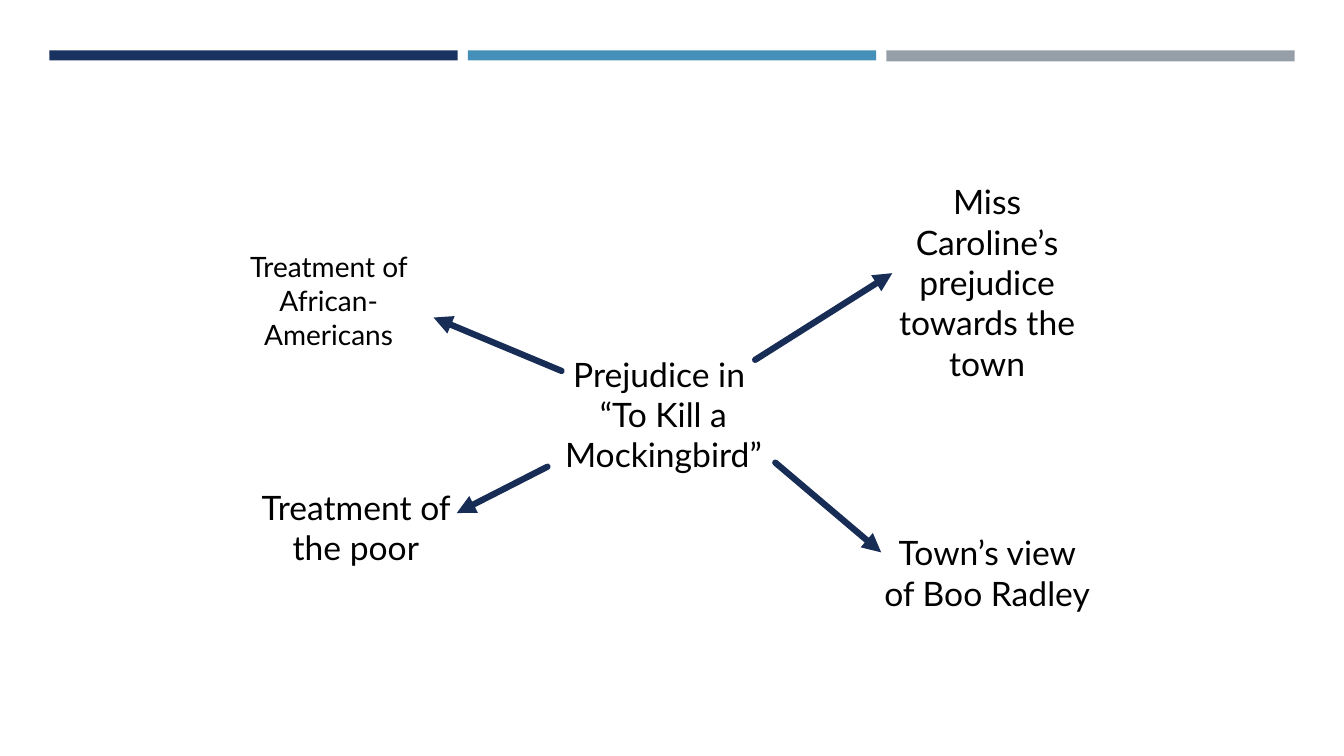
import pptx
import pptx.dml.color
import pptx.enum.shapes
import pptx.enum.text
import pptx.oxml.ns
import pptx.util
from lxml import etree
from pptx.dml.color import RGBColor
from pptx.util import Inches

NAVY = RGBColor(0x1A, 0x32, 0x60)
BLUE = RGBColor(0x45, 0x90, 0xB8)
GRAY = RGBColor(0x96, 0x9F, 0xA7)
ARROW = RGBColor(0x17, 0x2D, 0x56)
BLACK = RGBColor(0, 0, 0)

BAR_LEFT, BAR_STEP, BAR_WIDTH = 0.49, 4.15, 4.05
LABEL_WIDTH = 2.3

deck = pptx.Presentation()
deck.slide_width = Inches(13.33)
deck.slide_height = Inches(7.5)
page = deck.slides.add_slide(deck.slide_layouts[6])

for index, (color, height) in enumerate([(NAVY, 0.1), (BLUE, 0.1), (GRAY, 0.11)]):
    bar = page.shapes.add_shape(
        pptx.enum.shapes.MSO_SHAPE.RECTANGLE,
        Inches(BAR_LEFT + index * BAR_STEP), Inches(0.5),
        Inches(BAR_WIDTH), Inches(height))
    bar.shadow.inherit = False
    bar.fill.solid()
    bar.fill.fore_color.rgb = color
    bar.line.fill.background()

# left, top, height, font size, paragraphs
labels = [
    (5.43, 3.46, 1.31, 24, ["Prejudice in ", "“To Kill a Mockingbird”"]),
    (8.64, 1.75, 2.12, 24, ["Miss Caroline’s prejudice towards the town"]),
    (2.11, 2.43, 1.11, 20, ["Treatment of African-Americans"]),
    (2.38, 4.78, 0.91, 24, ["Treatment of the poor"]),
    (8.64, 5.23, 0.91, 24, ["Town’s view of Boo Radley"]),
]
for left, top, height, size, lines in labels:
    box = page.shapes.add_textbox(
        Inches(left), Inches(top), Inches(LABEL_WIDTH), Inches(height))
    frame = box.text_frame
    frame.word_wrap = True
    frame.auto_size = pptx.enum.text.MSO_AUTO_SIZE.SHAPE_TO_FIT_TEXT
    frame.text = "\n".join(lines)
    for para in frame.paragraphs:
        para.alignment = pptx.enum.text.PP_ALIGN.CENTER
        para.font.name = "Lato"
        para.font.size = pptx.util.Pt(size)
        para.font.color.rgb = BLACK

# start x, start y, end x, end y
arrows = [
    (5.57, 3.68, 4.3, 3.15),
    (5.43, 4.63, 4.53, 5.09),
    (7.49, 3.57, 8.85, 2.71),
    (7.69, 4.59, 8.74, 5.48),
]
for ends in arrows:
    arrow = page.shapes.add_connector(
        pptx.enum.shapes.MSO_CONNECTOR.STRAIGHT, *map(Inches, ends))
    arrow.line.color.rgb = ARROW
    arrow.line.width = pptx.util.Pt(4.5)
    properties = arrow.element.spPr
    outline = properties.find(pptx.oxml.ns.qn("a:ln"))
    outline.set("cap", "rnd")
    etree.SubElement(outline, pptx.oxml.ns.qn("a:tailEnd"), type="triangle")
    etree.SubElement(properties, pptx.oxml.ns.qn("a:effectLst"))

deck.save("out.pptx")
